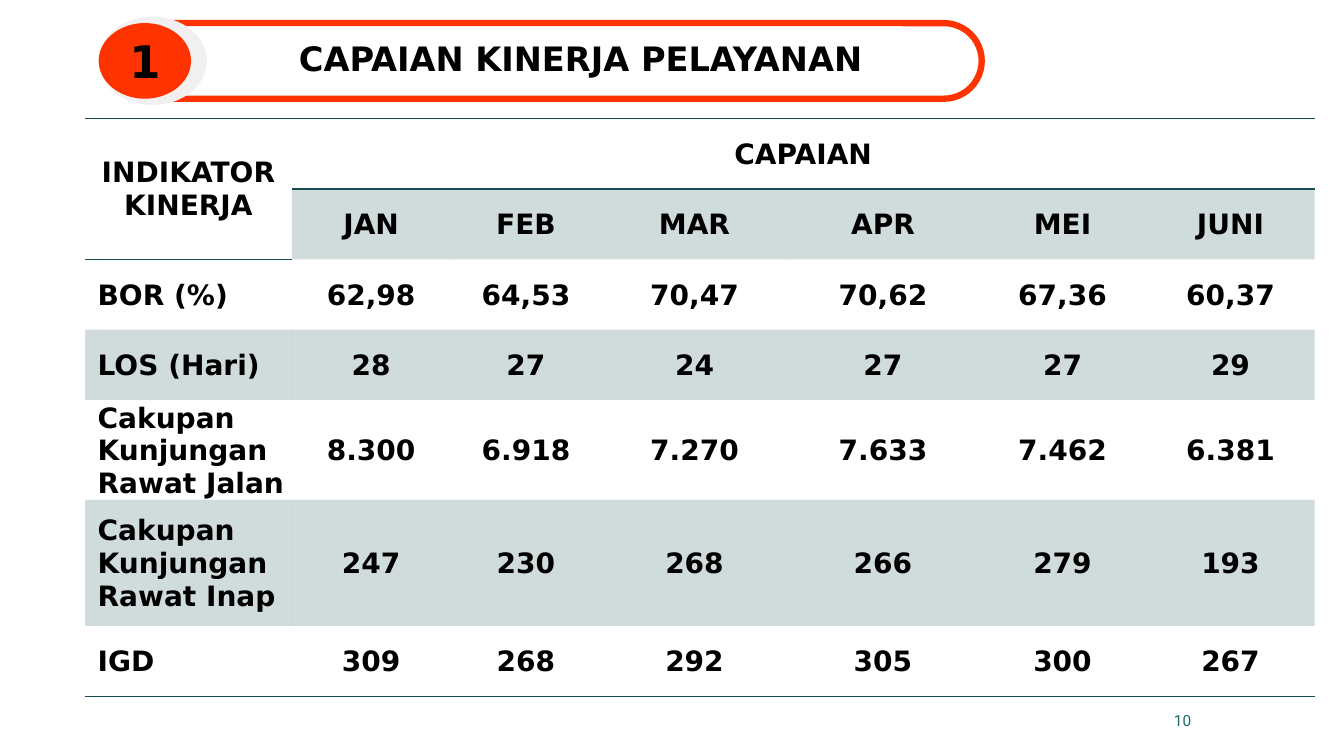
import pptx
import pptx.dml.color
import pptx.enum.shapes
import pptx.enum.text
import pptx.oxml
import pptx.oxml.ns
import pptx.util

TITLE = "CAPAIAN KINERJA PELAYANAN"
SECTION = "1"
PAGE = "10"
INDICATOR_HEADING = "INDIKATOR KINERJA"
RESULT_HEADING = "CAPAIAN"
MONTHS = ["JAN", "FEB", "MAR", "APR", "MEI", "JUNI"]
INDICATORS = [
    ("BOR (%)", "62,98", "64,53", "70,47", "70,62", "67,36", "60,37"),
    ("LOS (Hari)", "28", "27", "24", "27", "27", "29"),
    ("Cakupan Kunjungan Rawat Jalan", "8.300", "6.918", "7.270", "7.633", "7.462", "6.381"),
    ("Cakupan Kunjungan Rawat Inap", "247", "230", "268", "266", "279", "193"),
    ("IGD", "309", "268", "292", "305", "300", "267"),
]
COLORS = {"text": "000000", "teal": "164B4F", "page": "1F696F",
          "accent": "FF3300", "halo": "F1EFF0"}
HEADING_FONT = "DejaVu Sans"
PAGE_FONT = "Roboto"
COLUMN_WIDTHS = [197, 151, 144, 177, 182, 160, 160]
ROW_HEIGHTS = [67, 67, 67, 67, 71, 120, 67]
TABLE_LEFT, TABLE_TOP = 81, 113
NO_STYLE = "{2D5ABB26-0587-4C30-8999-92F81FD0307C}"
CENTER = pptx.enum.text.PP_ALIGN.CENTER
LEFT = pptx.enum.text.PP_ALIGN.LEFT
MIDDLE = pptx.enum.text.MSO_ANCHOR.MIDDLE
SHAPES = pptx.enum.shapes.MSO_SHAPE


def px(*lengths):
    return [pptx.util.Emu(length * 9525) for length in lengths]


def rgb(name):
    return pptx.dml.color.RGBColor.from_string(COLORS[name])


def write(frame, text, size, align, anchor=MIDDLE, font=HEADING_FONT, color="text", bold=True):
    frame.word_wrap = True
    frame.vertical_anchor = anchor
    paragraph = frame.paragraphs[0]
    paragraph.text = text
    paragraph.alignment = align
    paragraph.font.size = pptx.util.Pt(size)
    paragraph.font.name = font
    paragraph.font.bold = bold
    paragraph.font.color.rgb = rgb(color)
    return paragraph


def add_border(cell, side):
    cell._tc.get_or_add_tcPr().append(pptx.oxml.parse_xml(
        f'<a:{side} {pptx.oxml.ns.nsdecls("a")} w="12700"><a:solidFill>'
        f'<a:srgbClr val="{COLORS["teal"]}"/></a:solidFill></a:{side}>'))


def shade(cell):
    cell.fill.solid()
    cell.fill.fore_color.rgb = rgb("teal")
    tint = cell._tc.tcPr.find(".//" + pptx.oxml.ns.qn("a:srgbClr"))
    tint.append(pptx.oxml.parse_xml(
        f'<a:alpha {pptx.oxml.ns.nsdecls("a")} val="20000"/>'))


def add_badge_part(group, kind, box, fill=None):
    part = group.shapes.add_shape(kind, *px(*box))
    part.shadow.inherit = False
    if fill:
        part.fill.solid()
        part.fill.fore_color.rgb = rgb(fill)
        part.line.fill.background()
    else:
        part.fill.background()
    return part


def add_heading(slide):
    badge = slide.shapes.add_group_shape()
    pill = add_badge_part(badge, SHAPES.ROUNDED_RECTANGLE, (106, 22, 829, 72))
    pill.adjustments[0] = 0.5
    pill.line.color.rgb = rgb("accent")
    pill.line.width = pptx.util.Pt(4.5)
    add_badge_part(badge, SHAPES.OVAL, (94, 16, 103, 84), "halo")
    number = add_badge_part(badge, SHAPES.OVAL, (94, 22, 88, 72), "accent")
    write(number.text_frame, SECTION, 32, CENTER)

    title = slide.shapes.title
    title.left, title.top, title.width, title.height = px(140, 8, 826, 72)
    heading = write(title.text_frame, TITLE, 24, CENTER, pptx.enum.text.MSO_ANCHOR.BOTTOM)
    heading.line_spacing = 0.9


def add_results(slide):
    rows = [(INDICATOR_HEADING, RESULT_HEADING), ("", *MONTHS), *INDICATORS]
    table = slide.shapes.add_table(
        len(rows), len(COLUMN_WIDTHS),
        *px(TABLE_LEFT, TABLE_TOP, sum(COLUMN_WIDTHS), sum(ROW_HEIGHTS))).table
    table.first_row = table.horz_banding = False
    table._tbl.tblPr.find(pptx.oxml.ns.qn("a:tableStyleId")).text = NO_STYLE
    for column, width in zip(table.columns, px(*COLUMN_WIDTHS)):
        column.width = width
    for row, height in zip(table.rows, px(*ROW_HEIGHTS)):
        row.height = height
    table.cell(0, 0).merge(table.cell(1, 0))
    table.cell(0, 1).merge(table.cell(0, len(MONTHS)))

    last = len(rows) - 1
    for r in range(len(rows)):
        for c in range(len(COLUMN_WIDTHS)):
            cell = table.cell(r, c)
            if r == 0:
                add_border(cell, "lnT")
            if r in (0, last) or (r, c) == (1, 0):
                add_border(cell, "lnB")
            if r % 2 and (r, c) != (1, 0):
                shade(cell)
            else:
                cell.fill.background()
            if cell.is_spanned:
                continue
            inset = 0 if r == c == 0 else 2
            cell.margin_left, cell.margin_right, cell.margin_top, cell.margin_bottom = px(
                inset, inset, inset, 0)
            cell.vertical_anchor = MIDDLE
            is_label = c == 0 and r > 1
            entry = write(cell.text_frame, rows[r][c], 20, LEFT if is_label else CENTER)
            if is_label:
                entry._p.get_or_add_pPr().set("marL", str(px(10)[0]))


def main():
    deck = pptx.Presentation()
    deck.slide_width, deck.slide_height = px(1280, 720)
    slide = deck.slides.add_slide(deck.slide_layouts[5])
    add_results(slide)
    page = slide.shapes.add_textbox(*px(845, 667, 299, 38))
    write(page.text_frame, PAGE, 11, pptx.enum.text.PP_ALIGN.RIGHT,
          font=PAGE_FONT, color="page", bold=False)
    add_heading(slide)
    deck.save("out.pptx")


if __name__ == "__main__":
    main()
